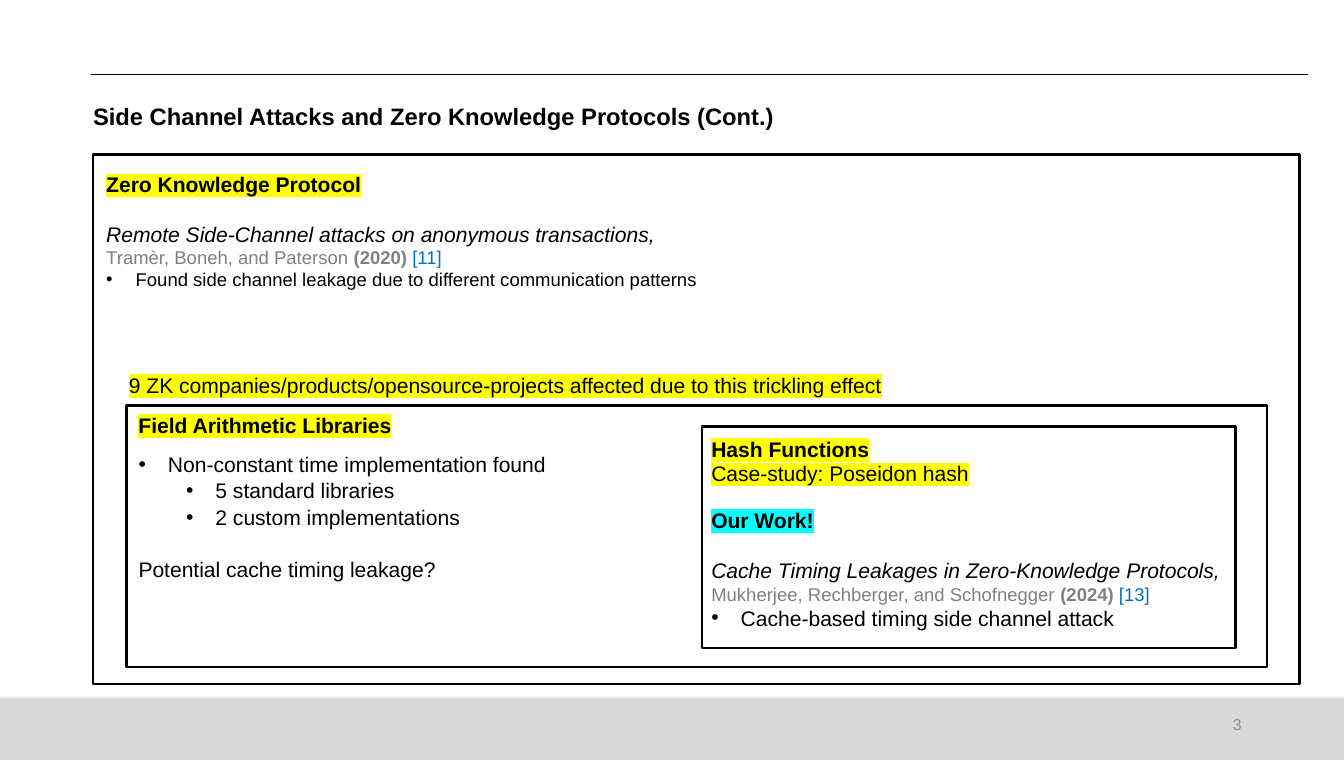
"""Build the slide on side channel attacks and zero knowledge protocols."""
from copy import deepcopy

from lxml import etree
from pptx import Presentation
from pptx.dml.color import RGBColor
from pptx.enum.shapes import MSO_CONNECTOR, MSO_SHAPE
from pptx.enum.text import MSO_ANCHOR, MSO_AUTO_SIZE, PP_ALIGN
from pptx.oxml.ns import qn
from pptx.util import Inches, Pt

RECTANGLE, STRAIGHT = MSO_SHAPE.RECTANGLE, MSO_CONNECTOR.STRAIGHT
TOP, MIDDLE = MSO_ANCHOR.TOP, MSO_ANCHOR.MIDDLE
LEFT, RIGHT = PP_ALIGN.LEFT, PP_ALIGN.RIGHT
NO_AUTOFIT = MSO_AUTO_SIZE.NONE
BLACK, GRAY, BLUE, YELLOW, CYAN = "000000", "808080", "0070C0", "FFFF00", "00FFFF"


def rgb(value):
    """Turn a hex string into a colour."""
    return RGBColor.from_string(value)


def write(frame, paragraphs):
    """Fill a text frame with (layout, runs) paragraphs."""
    for index, (layout, runs) in enumerate(paragraphs):
        paragraph = frame.paragraphs[0] if index == 0 else frame.add_paragraph()
        for key, value in {"alignment": LEFT, "space_before": Pt(layout.get("before", 0))}.items():
            setattr(paragraph, key, value)
        paragraph.alignment = layout.get("align", LEFT)
        if "indent" in layout:
            paragraph.level = layout.get("level", 0)
            properties = paragraph._p.get_or_add_pPr()
            properties.set("marL", str(Inches(layout["indent"])))
            properties.set("indent", str(Inches(-0.31)))
            etree.SubElement(properties, qn("a:buFont"), typeface="Arial")
            etree.SubElement(properties, qn("a:buChar"), char="•")
        for text, style in runs:
            run = paragraph.add_run()
            run.text = text.rstrip("\n")
            look = {"name": "Arial", "size": Pt(style.get("size", 16)),
                    "bold": style.get("bold", False), "italic": style.get("italic", False)}
            for key, value in look.items():
                setattr(run.font, key, value)
            run.font.color.rgb = rgb(style.get("color", BLACK))
            marks = run._r.get_or_add_rPr()
            if "highlight" in style:
                highlight = etree.Element(qn("a:highlight"))
                etree.SubElement(highlight, qn("a:srgbClr"), val=style["highlight"])
                marks.find(qn("a:solidFill")).addnext(highlight)
            if text.endswith("\n"):
                paragraph.add_line_break()
                paragraph._p[-1].append(deepcopy(marks))


deck = Presentation()
deck.slide_width, deck.slide_height = Inches(14.15), Inches(8)
slide = deck.slides.add_slide(deck.slide_layouts[5])
shapes = slide.shapes

footer_band = shapes.add_shape(RECTANGLE, 0, Inches(7.35), Inches(14.15), Inches(0.65))
footer_band.fill.solid()
footer_band.fill.fore_color.rgb = rgb("D9D9D9")
footer_band.line.fill.background()
header_rule = shapes.add_connector(STRAIGHT, Inches(0.96), Inches(0.78), Inches(13.77), Inches(0.78))
header_rule.line.color.rgb = rgb(BLACK)
header_rule.line.width = Pt(0.5)
for part, opacity, distance in [(footer_band, 35, 1.8), (header_rule, 38, 1.6)]:
    effects = etree.SubElement(part._element.spPr, qn("a:effectLst"))
    shadow = etree.SubElement(effects, qn("a:outerShdw"), blurRad=str(Pt(3.1)), dist=str(Pt(distance)),
                              dir="5400000", rotWithShape="0")
    shade = etree.SubElement(shadow, qn("a:srgbClr"), val=BLACK)
    etree.SubElement(shade, qn("a:alpha"), val=str(opacity * 1000))

title = shapes.title
title_format = {"left": Inches(0.98), "top": Inches(1.07), "width": Inches(7.24), "height": Inches(0.43)}
for key, value in title_format.items():
    setattr(title, key, value)
frame_format = {"margin_left": 0, "margin_top": 0, "margin_right": 0, "margin_bottom": 0,
                "vertical_anchor": TOP, "auto_size": NO_AUTOFIT, "word_wrap": True}
for key, value in frame_format.items():
    setattr(title.text_frame, key, value)
write(title.text_frame, [({}, [("Side Channel Attacks and Zero Knowledge Protocols (Cont.)",
                                {"size": 18, "bold": True})])])

for box in [(0.98, 1.63, 12.7, 5.57), (1.33, 4.27, 12.01, 2.75), (7.39, 4.49, 5.62, 2.33)]:
    panel = shapes.add_shape(RECTANGLE, *map(Inches, box))
    panel.shadow.inherit = False
    panel.fill.solid()
    panel.fill.fore_color.rgb = rgb("FFFFFF")
    panel.line.color.rgb = rgb(BLACK)
    panel.line.width = Pt(2)

heading = {"bold": True, "highlight": YELLOW}
marked = {"highlight": YELLOW}
paper = {"italic": True}
authors = {"size": 14, "color": GRAY}
year = {**authors, "bold": True}
citation = {"size": 14, "color": BLUE}
bullet = {"indent": 0.31}
sub_bullet = {"indent": 0.81, "level": 1, "before": 1}

texts = [
    ((1.02, 1.76, 10.98, 1.58), [
        ({}, [("Zero Knowledge Protocol", heading)]),
        ({"before": 18}, [("Remote Side-Channel attacks on anonymous transactions, \n", paper),
                          ("Tramèr, Boneh, and Paterson ", authors), ("(2020) ", year),
                          ("[11]", citation)]),
        (bullet, [("Found side channel leakage due to different communication patterns", {"size": 14})]),
    ]),
    ((1.26, 3.87, 11.76, 0.37), [
        ({}, [("9 ZK companies/products/opensource-projects affected due to this trickling effect", marked)]),
    ]),
    ((1.36, 4.29, 4.7, 0.37), [({}, [("Field Arithmetic Libraries", heading)])]),
    ((1.36, 4.7, 4.55, 1.45), [
        (bullet, [("Non-constant time implementation found", {})]),
        (sub_bullet, [("5 standard libraries", {})]),
        (sub_bullet, [("2 custom implementations", {})]),
        ({"before": 20}, [("Potential cache timing leakage?", {})]),
    ]),
    ((7.39, 4.54, 5.62, 0.37), [({}, [("Hash Functions", heading)])]),
    ((7.39, 4.8, 5.62, 0.37), [({}, [("Case-study: Poseidon hash", marked)])]),
    ((7.39, 5.29, 5.62, 1.41), [
        ({}, [("Our Work!", {"bold": True, "highlight": CYAN})]),
        ({"before": 19}, [("Cache Timing Leakages in Zero-Knowledge Protocols, \n", paper),
                          ("Mukherjee, Rechberger, and Schofnegger ", authors), ("(2024)", year),
                          (" [13]", citation)]),
        (bullet, [("Cache-based timing side channel attack", {})]),
    ]),
    ((9.99, 7.41, 3.18, 0.43), [({"align": RIGHT}, [("3", {"size": 12, "color": "8C8C8C"})])]),
]
for box, paragraphs in texts:
    label = shapes.add_textbox(*map(Inches, box))
    label.text_frame.word_wrap = True
    write(label.text_frame, paragraphs)
label.text_frame.vertical_anchor = MIDDLE

deck.save("out.pptx")
